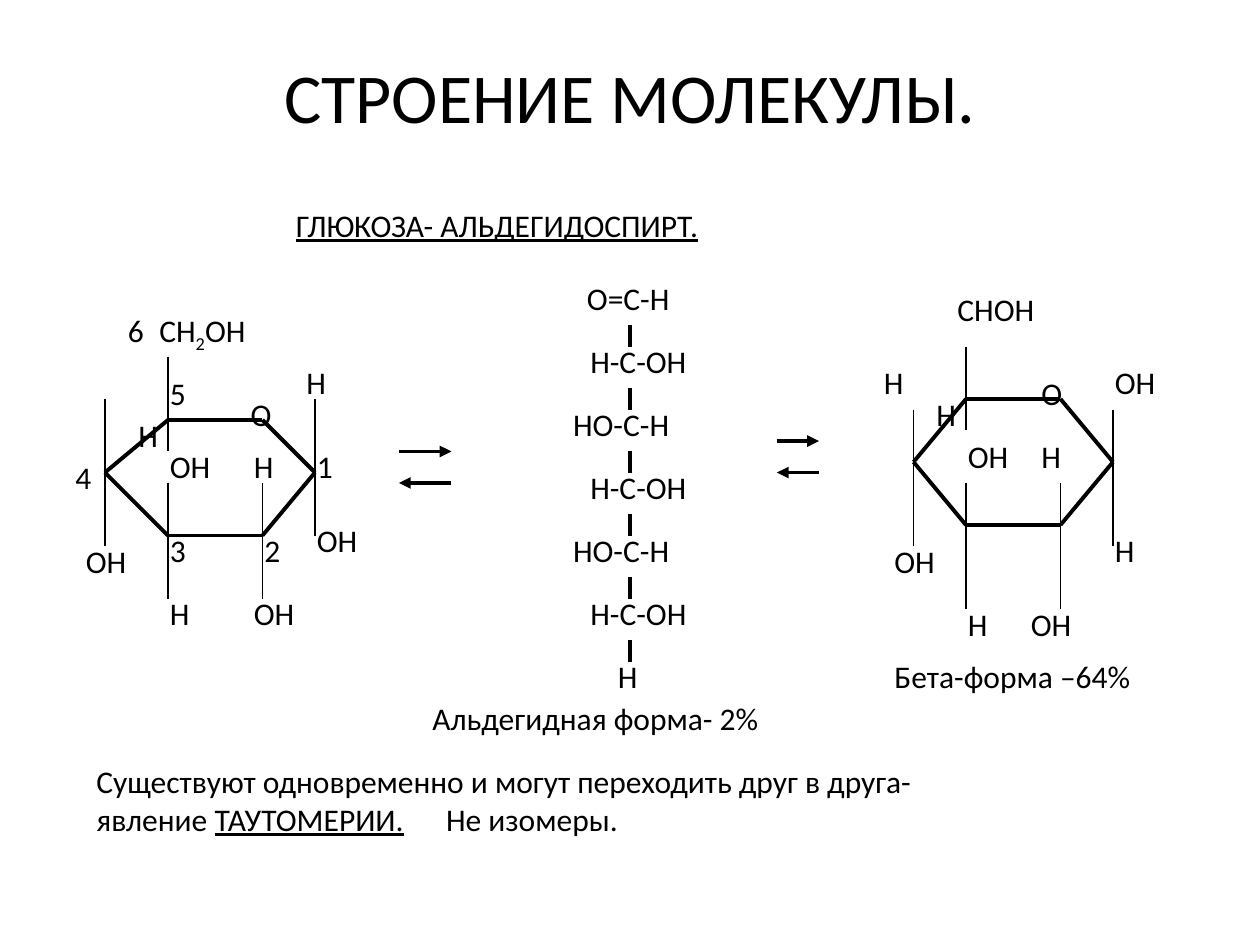
from lxml import etree
from pptx import Presentation
from pptx.dml.color import RGBColor
from pptx.enum.shapes import MSO_CONNECTOR
from pptx.enum.text import MSO_ANCHOR, MSO_AUTO_SIZE, PP_ALIGN
from pptx.oxml.ns import qn
from pptx.util import Inches, Pt

STRAIGHT = MSO_CONNECTOR.STRAIGHT
TOP = MSO_ANCHOR.TOP
GROW, FIXED = MSO_AUTO_SIZE.SHAPE_TO_FIT_TEXT, MSO_AUTO_SIZE.NONE
LEFT, CENTER = PP_ALIGN.LEFT, PP_ALIGN.CENTER

COLORS = {"paper": "FFFFFF", "ink": "000000"}
FONT = "Calibri"
THICK, THIN = 2.25, 0.75
COLS, ROWS = 120, 90          # grid of the whole slide
SPACE = 0.68                  # width of one letter gap, in columns
LABEL_W = {1: 5.3, 2: 8.2}    # label widths by number of letters
DIGIT_W = 4.4


def grid(n):
    return Inches(n * 10 / COLS)


def add_text(s, box, lines, size=18, align=LEFT, gap=0, tab=None, auto=GROW):
    """Each line is a list of (text, style) runs; gap indents by letter gaps."""
    sp = s.shapes.add_textbox(*(grid(n) for n in box))
    tf = sp.text_frame
    tf.word_wrap = auto == FIXED
    tf.auto_size = auto
    tf.vertical_anchor = TOP
    for i, runs in enumerate(lines):
        p = tf.add_paragraph() if i else tf.paragraphs[0]
        p.alignment = align
        p_pr = p._p.get_or_add_pPr()
        if gap:
            p_pr.set("marL", str(grid(gap * SPACE)))
        if tab:
            tabs = etree.SubElement(p_pr, qn("a:tabLst"))
            etree.SubElement(tabs, qn("a:tab"), pos=str(grid(tab)), algn="l")
        for text, style in runs:
            r = p.add_run()
            r.text = text
            r.font.name, r.font.size = FONT, Pt(size)
            r.font.color.rgb = RGBColor.from_string(COLORS["ink"])
            if style == "underline":
                r.font.underline = True
            elif style == "sub":
                r._r.get_or_add_rPr().set("baseline", "-25000")


def add_line(s, x1, y1, x2, y2, width=THICK, arrow=False):
    sp = s.shapes.add_connector(STRAIGHT, *(grid(n) for n in (x1, y1, x2, y2)))
    sp.line.width = Pt(width)
    sp.line.color.rgb = RGBColor.from_string(COLORS["ink"])
    if arrow:
        etree.SubElement(sp.line._get_or_add_ln(), qn("a:tailEnd"), type="triangle")
    etree.SubElement(sp._element.spPr, qn("a:effectLst"))


def add_ring(s, left, top, xs, ys, bonds, labels):
    """Six-sided ring with vertical bonds (corner, from row, to row) and labels."""
    xs = [left + x for x in xs]
    y_top, y_mid, y_low = (top + y for y in ys)
    corners = [(xs[0], y_mid), (xs[1], y_top), (xs[2], y_top),
               (xs[3], y_mid), (xs[2], y_low), (xs[1], y_low)]
    for start, end in zip(corners, corners[1:] + corners[:1]):
        add_line(s, *start, *end)
    for corner, y1, y2 in bonds:
        add_line(s, xs[corner], top + y1, xs[corner], top + y2, THIN)
    for text, x, y in labels:
        width = DIGIT_W if text.isdigit() else LABEL_W[len(text)]
        add_text(s, (left + x, top + y, width, 6), [[(text, None)]])


def add_alpha_form(s, left, top):
    add_ring(s, left, top, (4, 10, 19, 24), (11, 16, 22),
             [(0, 9, 23), (1, 5, 14), (1, 17, 28), (2, 17, 28), (3, 9, 22)],
             [("Н", 22, 5), ("ОН", 23, 20), ("Н", 17, 13), ("ОН", 17, 27),
              ("ОН", 9, 13), ("Н", 6, 10), ("Н", 9, 27), ("ОН", 1, 22),
              ("1", 23, 13), ("2", 18, 21), ("3", 9, 21), ("4", 0, 14),
              ("5", 9, 6), ("6", 5, 0)])
    add_text(s, (left + 16, top + 8, 5.2, 4.8), [[("О", None)]], gap=1)
    add_text(s, (left + 8, top, 15.1, 6),
             [[("СН", None), ("2", "sub"), ("ОН", None)]])


def add_beta_form(s, left, top):
    add_ring(s, left, top, (4, 9, 18, 23), (11, 17, 23),
             [(0, 12, 25), (1, 6, 14), (1, 19, 31), (2, 19, 31), (3, 12, 25)],
             [("О", 15, 8), ("ОН", 22, 7), ("Н", 22, 23), ("Н", 15, 14),
              ("ОН", 14, 30), ("ОН", 8, 14), ("Н", 8, 30), ("ОН", 1, 24),
              ("Н", 0, 7), ("Н", 5, 10)])
    add_text(s, (left + 7, top, 13.8, 6), [[("СНОН", None)]])
    add_text(s, (left + 1, top + 35, 32.5, 6), [[("Бета-форма –64%", None)]])


def add_open_chain(s, left, top):
    links = [("О=С-Н", 2, 13.2, 4), ("Н-С-ОН", 3, 14.4, 3),
             ("НО-С-Н", 0, 15.1, 5), ("Н-С-ОН", 3, 15.1, 3),
             ("НО-С-Н", 0, 15.1, 5), ("Н-С-ОН", 3, 13.8, 3), ("Н", 7, 5, 1)]
    step = 6
    for i, (text, x, width, gap) in enumerate(links):
        y = top + i * step
        add_text(s, (left + x, y, width, 4.8), [[(text, None)]], gap=gap)
        if i:
            add_line(s, left + 10, y - 1, left + 10, y + 1)
    add_text(s, (left - 10, top + 40, 44.2, 6),
             [[("Альдегидная форма- 2%", None)]])


def add_equilibrium(s, left, top, width):
    add_line(s, left, top, left + width, top, arrow=True)
    add_line(s, left + width, top + 3, left, top + 3, arrow=True)


def add_headings(s):
    add_text(s, (9, 4.5, 102, 15), [[("СТРОЕНИЕ МОЛЕКУЛЫ.", None)]],
             size=40, align=CENTER, auto=FIXED)
    add_text(s, (27, 19, 62.4, 6), [[("ГЛЮКОЗА- АЛЬДЕГИДОСПИРТ.", "underline")]])


def add_conclusion(s, left, top):
    add_text(s, (left, top, 107.4, 10.8), [
        [("Существуют одновременно и могут переходить друг в друга-", None)],
        [("явление ", None), ("ТАУТОМЕРИИ.", "underline"),
         ("\tНе изомеры.", None)]], tab=33.3)


def main():
    prs = Presentation()
    prs.slide_width, prs.slide_height = grid(COLS), grid(ROWS)
    s = prs.slides.add_slide(prs.slide_layouts[6])
    s.background.fill.solid()
    s.background.fill.fore_color.rgb = RGBColor.from_string(COLORS["paper"])

    add_headings(s)
    add_alpha_form(s, 6, 29)
    add_equilibrium(s, 38, 43, 5)
    add_open_chain(s, 50, 26)
    add_equilibrium(s, 74, 42, 4)
    add_beta_form(s, 83, 27)
    add_conclusion(s, 8, 72)
    prs.save("out.pptx")


if __name__ == "__main__":
    main()
